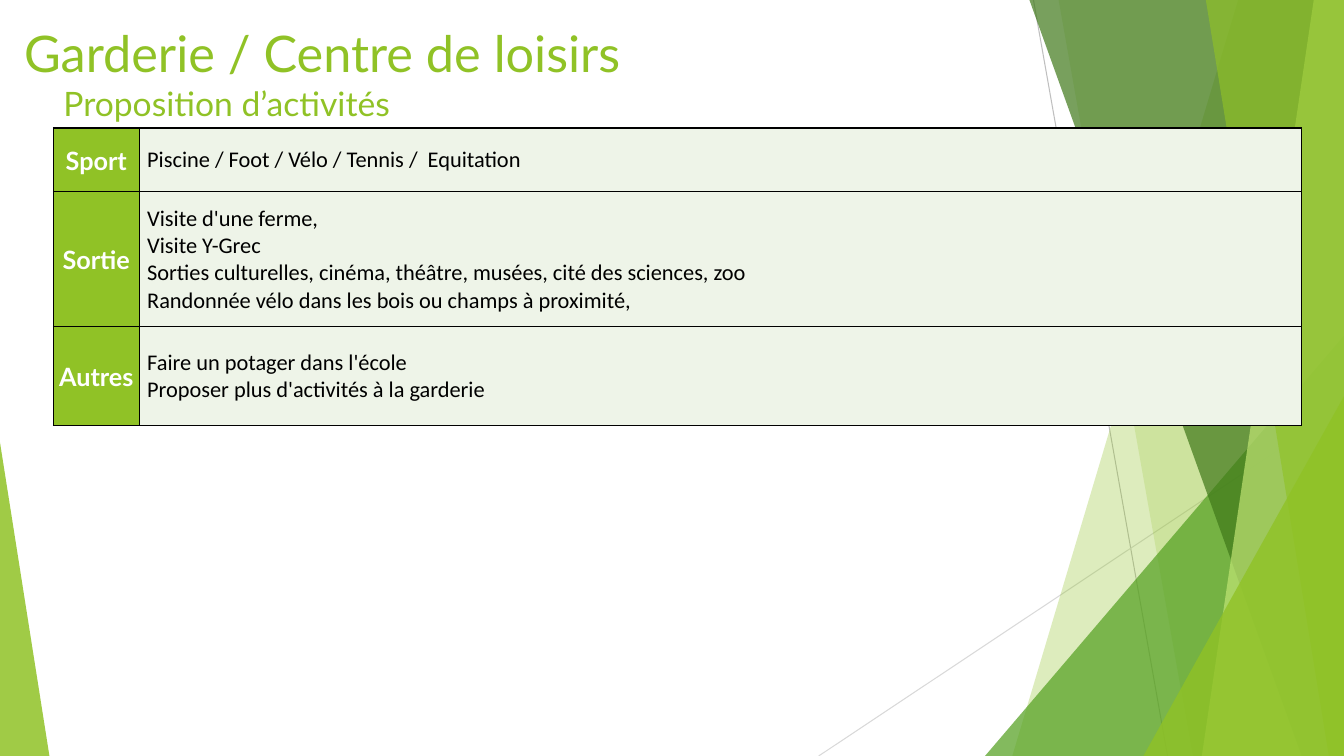
from dataclasses import dataclass

from lxml import etree
from pptx import Presentation
from pptx.dml.color import RGBColor
from pptx.enum.shapes import MSO_CONNECTOR, MSO_SHAPE
from pptx.enum.text import MSO_ANCHOR, PP_ALIGN
from pptx.oxml.ns import qn
from pptx.util import Inches, Pt

STRAIGHT = MSO_CONNECTOR.STRAIGHT
TRIANGLE = MSO_SHAPE.ISOSCELES_TRIANGLE
MIDDLE, TOP = MSO_ANCHOR.MIDDLE, MSO_ANCHOR.TOP
CENTER, LEFT = PP_ALIGN.CENTER, PP_ALIGN.LEFT
PAGE_WIDTH, PAGE_HEIGHT = 13.33, 7.5


@dataclass(frozen=True)
class Theme:
    green: str = "90C226"
    mid_green: str = "54A021"
    dark_green: str = "3F7819"
    pale_green: str = "C0E474"
    cell_tint: str = "EEF4E8"
    white: str = "FFFFFF"
    black: str = "000000"
    ray_grey: str = "BFBFBF"
    pale_ray_grey: str = "D9D9D9"
    heading_font: str = "Lato"
    body_font: str = "Calibri"
    title_size: int = 36
    subtitle_size: int = 24
    label_size: int = 18
    body_size: int = 16
    border_width: float = 1
    ray_width: float = 0.75


THEME = Theme()


@dataclass(frozen=True)
class Ray:
    start: tuple[float, float]
    end: tuple[float, float]
    color: str


@dataclass(frozen=True)
class Panel:
    """Full-height facet whose slanted left edge runs to the page's right edge."""
    top_x: float
    bottom_x: float
    color: str
    opacity: int


@dataclass(frozen=True)
class Spike:
    """Triangle standing on the page bottom; apex 0 is left, 1 is right."""
    left: float
    top: float
    width: float
    apex: float
    color: str
    opacity: int


@dataclass(frozen=True)
class Activity:
    label: str
    lines: tuple[str, ...]
    height: float


@dataclass(frozen=True)
class TextStyle:
    font: str
    size: int
    color: str
    bold: bool = False


RAYS = (
    Ray((10.25, 0), (11.58, PAGE_HEIGHT), THEME.ray_grey),
    Ray((PAGE_WIDTH, 4.03), (8.12, PAGE_HEIGHT), THEME.pale_ray_grey),
)
FACETS = (
    Panel(12.28, 10.04, THEME.green, 30),
    Panel(10.5, 11.83, THEME.green, 20),
    Spike(9.77, 3.33, 3.56, 1, THEME.mid_green, 72),
    Panel(10.21, 12.91, THEME.dark_green, 70),
    Panel(13.03, 11.92, THEME.pale_green, 70),
    Panel(11.96, 13.18, THEME.green, 65),
    Spike(11.34, 3.93, 1.99, 1, THEME.green, 80),
    Spike(0, 4.39, 0.49, 0, THEME.green, 85),
)
ACTIVITIES = (
    Activity("Sport", ("Piscine / Foot / Vélo / Tennis /  Equitation",), 0.63),
    Activity("Sortie", (
        "Visite d'une ferme,",
        "Visite Y-Grec",
        "Sorties culturelles, cinéma, théâtre, musées, cité des sciences, zoo",
        "Randonnée vélo dans les bois ou champs à proximité,",
    ), 1.34),
    Activity("Autres", (
        "Faire un potager dans l'école",
        "Proposer plus d'activités à la garderie",
    ), 0.98),
)
COLUMN_WIDTHS = (0.85, 11.53)
TITLE = TextStyle(THEME.heading_font, THEME.title_size, THEME.green)
SUBTITLE = TextStyle(THEME.heading_font, THEME.subtitle_size, THEME.green)
LABEL = TextStyle(THEME.heading_font, THEME.label_size, THEME.white, True)
BODY = TextStyle(THEME.body_font, THEME.body_size, THEME.black)


def draw_ray(page, ray: Ray) -> None:
    points = [Inches(value) for value in (*ray.start, *ray.end)]
    line = page.shapes.add_connector(STRAIGHT, *points)
    line.line.color.rgb = RGBColor.from_string(ray.color)
    line.line.width = Pt(THEME.ray_width)
    etree.SubElement(line._element.spPr, qn("a:effectLst"))


def draw_facet(page, facet: Panel | Spike) -> None:
    if isinstance(facet, Panel):
        builder = page.shapes.build_freeform(Inches(facet.top_x), 0)
        corners = ((PAGE_WIDTH, 0), (PAGE_WIDTH, PAGE_HEIGHT), (facet.bottom_x, PAGE_HEIGHT))
        builder.add_line_segments([(Inches(x), Inches(y)) for x, y in corners])
        shape = builder.convert_to_shape()
    else:
        shape = page.shapes.add_shape(
            TRIANGLE, Inches(facet.left), Inches(facet.top),
            Inches(facet.width), Inches(PAGE_HEIGHT - facet.top))
        shape.adjustments[0] = facet.apex
    shape.shadow.inherit = False
    shape.line.fill.background()
    shape.fill.solid()
    shape.fill.fore_color.rgb = RGBColor.from_string(facet.color)
    color = shape._element.spPr.find(f"{qn('a:solidFill')}/{qn('a:srgbClr')}")
    etree.SubElement(color, qn("a:alpha"), val=str(facet.opacity * 1000))


def style_span(span, style: TextStyle) -> None:
    span.font.name = style.font
    span.font.size = Pt(style.size)
    span.font.bold = style.bold
    span.font.color.rgb = RGBColor.from_string(style.color)


def write_lines(para, lines: tuple[str, ...], styles: tuple[TextStyle, ...]) -> None:
    """Fill one paragraph with lines, each in its own style, split by line breaks."""
    para.text = "\v".join(lines)
    for span, style in zip(para.runs, styles):
        style_span(span, style)
    for line_break, style in zip(para._p.findall(qn("a:br")), styles):
        etree.SubElement(line_break, qn("a:rPr"), sz=str(style.size * 100))


def draw_title(page) -> None:
    box = page.shapes.add_textbox(Inches(0.14), Inches(0.17), Inches(10.29), Inches(1.44))
    box.text_frame.word_wrap = True
    box.text_frame.vertical_anchor = TOP
    para = box.text_frame.paragraphs[0]
    write_lines(para, ("Garderie / Centre de loisirs", "Proposition d’activités"),
                (TITLE, SUBTITLE))
    indent = Inches(0.39)
    properties = para._p.get_or_add_pPr()
    properties.set("marL", str(indent))
    properties.set("indent", str(-indent))


def add_borders(cell) -> None:
    properties = cell._tc.get_or_add_tcPr()
    for position, side in enumerate(("lnL", "lnR", "lnT", "lnB")):
        border = etree.Element(qn(f"a:{side}"), w=str(Pt(THEME.border_width)))
        fill = etree.SubElement(border, qn("a:solidFill"))
        etree.SubElement(fill, qn("a:srgbClr"), val=THEME.black)
        properties.insert(position, border)


def fill_cell(cell, lines: tuple[str, ...], style: TextStyle, fill: str,
              alignment: PP_ALIGN, left_margin: float) -> None:
    cell.fill.solid()
    cell.fill.fore_color.rgb = RGBColor.from_string(fill)
    cell.vertical_anchor = MIDDLE
    cell.margin_left = Inches(left_margin)
    cell.margin_right = cell.margin_top = Inches(0.01)
    cell.margin_bottom = 0
    para = cell.text_frame.paragraphs[0]
    write_lines(para, lines, (style,) * len(lines))
    para.alignment = alignment
    add_borders(cell)


def draw_activities(page) -> None:
    height = sum(activity.height for activity in ACTIVITIES)
    table = page.shapes.add_table(
        len(ACTIVITIES), len(COLUMN_WIDTHS), Inches(0.53), Inches(1.27),
        Inches(sum(COLUMN_WIDTHS)), Inches(height)).table
    table.first_row = table.horz_banding = False
    for column, width in zip(table.columns, COLUMN_WIDTHS):
        column.width = Inches(width)
    for row, activity in zip(table.rows, ACTIVITIES):
        row.height = Inches(activity.height)
        label, details = row.cells
        fill_cell(label, (activity.label,), LABEL, THEME.green, CENTER, 0.01)
        fill_cell(details, activity.lines, BODY, THEME.cell_tint, LEFT, 0.08)


def main() -> None:
    deck = Presentation()
    deck.slide_width, deck.slide_height = Inches(PAGE_WIDTH), Inches(PAGE_HEIGHT)
    page = deck.slides.add_slide(deck.slide_layouts[6])
    for ray in RAYS:
        draw_ray(page, ray)
    for facet in FACETS:
        draw_facet(page, facet)
    draw_title(page)
    draw_activities(page)
    deck.save("out.pptx")


if __name__ == "__main__":
    main()
